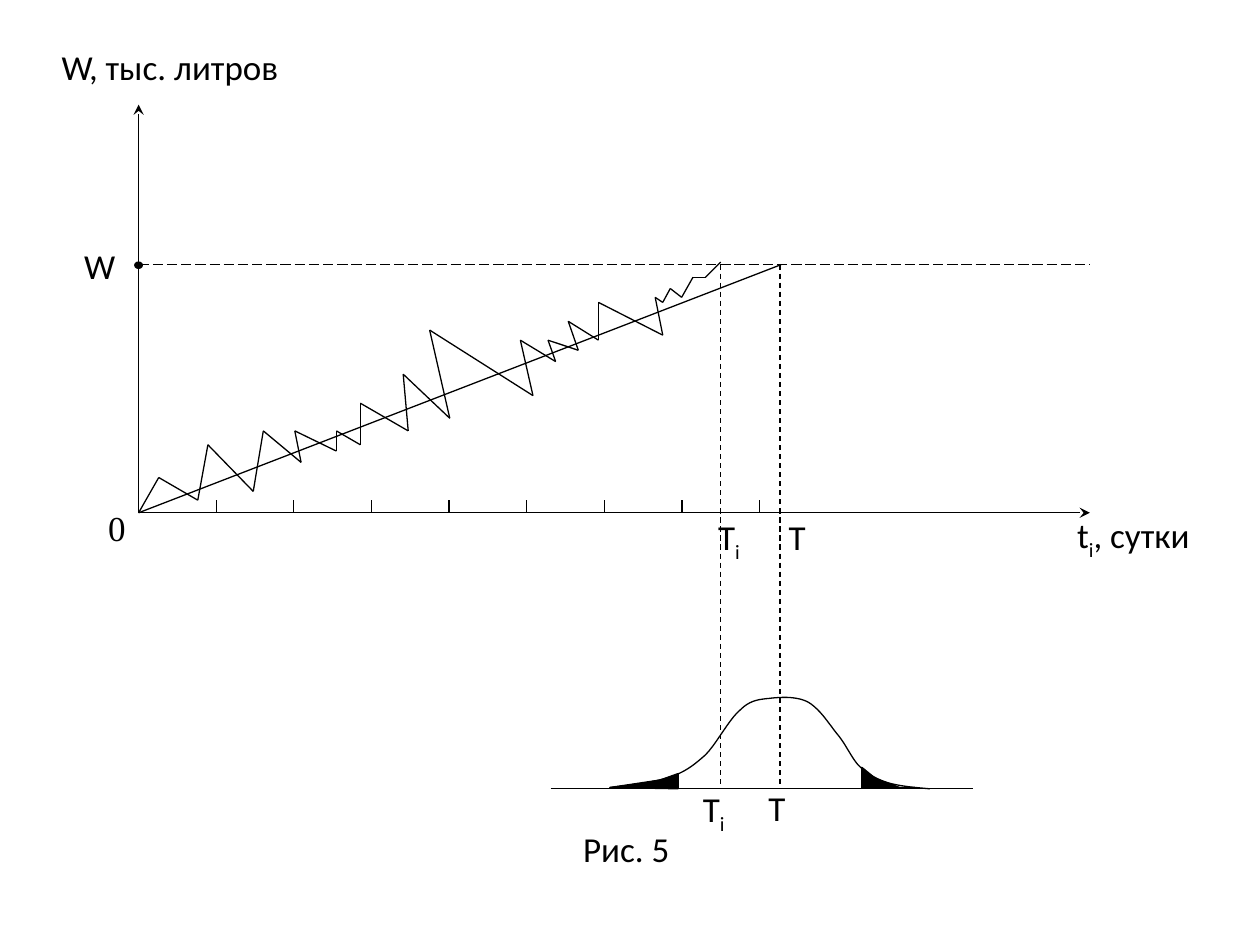
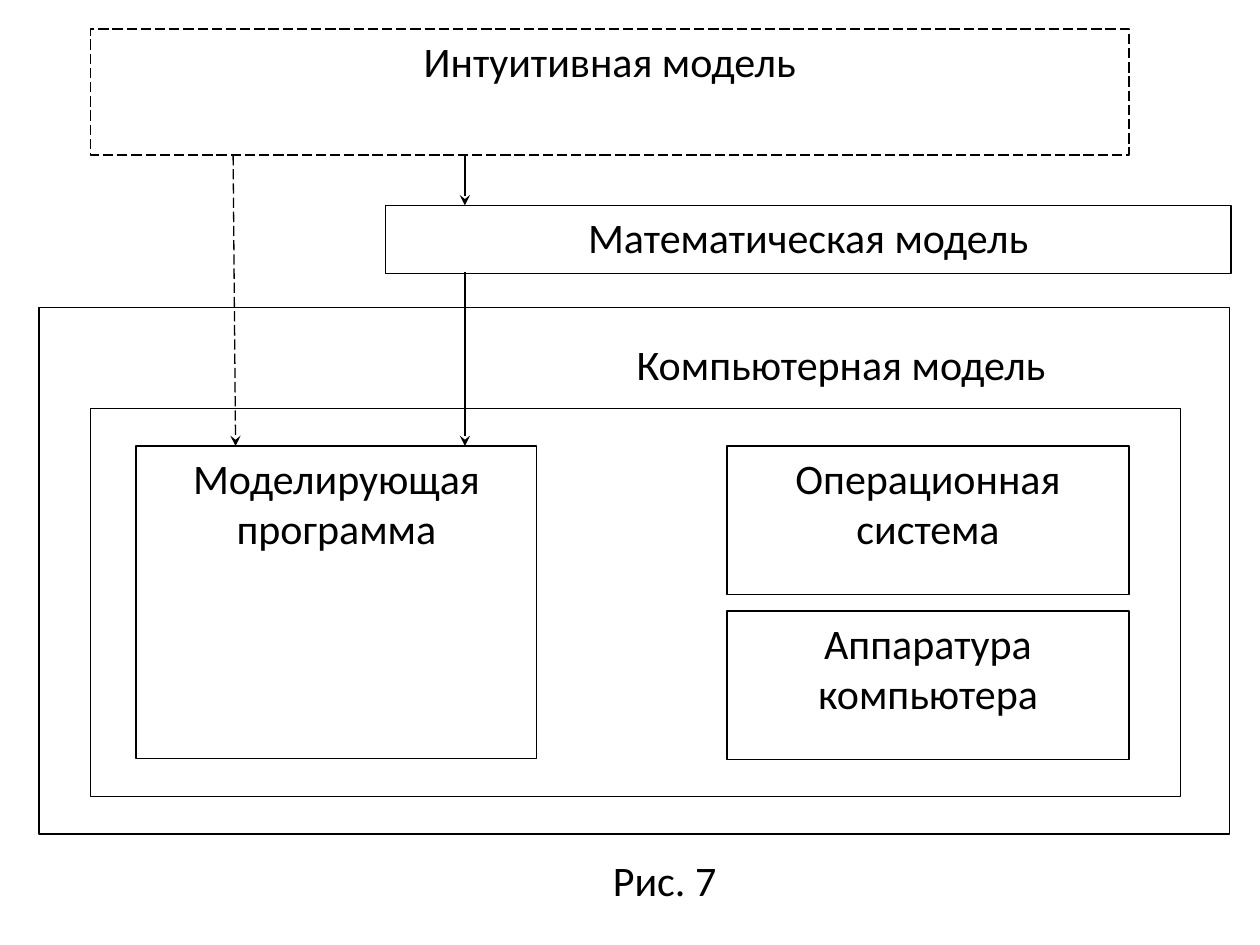
from dataclasses import dataclass
from itertools import pairwise

from lxml import etree
from pptx import Presentation
from pptx.dml.color import RGBColor
from pptx.enum import dml, shapes, text
from pptx.oxml.ns import qn
from pptx.util import Inches, Pt

Point = tuple[float, float]
LONG = dml.MSO_LINE.LONG_DASH
DASH = dml.MSO_LINE.DASH


@dataclass(frozen=True)
class Theme:
    ink: RGBColor = RGBColor(0, 0, 0)
    font: str = "Calibri"
    serif: str = "Times New Roman"
    small: int = 20
    large: int = 24
    stroke: float = 0.75
    after: int = 10


THEME = Theme()


@dataclass(frozen=True)
class Label:
    """Words in a frame; every second part between underscores is a subscript."""
    words: str
    left: float
    top: float
    width: float
    height: float = 0.59
    size: int = THEME.small
    font: str = THEME.font
    align: text.PP_ALIGN = text.PP_ALIGN.LEFT


@dataclass(frozen=True)
class Box:
    left: float
    top: float
    width: float
    height: float
    words: str = ""
    after: int = THEME.after
    dash: dml.MSO_LINE | None = None


@dataclass(frozen=True)
class Line:
    start: Point
    end: Point
    dash: dml.MSO_LINE | None = None
    arrow: bool = False


def write(shape, words: str, size: int, font: str, align, after: int) -> None:
    frame = shape.text_frame
    frame.word_wrap = True
    frame.vertical_anchor = text.MSO_ANCHOR.TOP
    para = frame.paragraphs[0]
    para.alignment = align
    para.space_after = Pt(after)
    para.font.size = Pt(size)
    para.font.name = font
    para.font.color.rgb = THEME.ink
    for place, part in enumerate(words.split("_")):
        run = para.add_run()
        run.text = part
        if place % 2:
            run._r.get_or_add_rPr().set("baseline", "-25000")


def add_label(slide, label: Label) -> None:
    area = map(Inches, (label.left, label.top, label.width, label.height))
    write(slide.shapes.add_textbox(*area), label.words, label.size,
          label.font, label.align, THEME.after)


def style(shape, filled: bool = False) -> None:
    shape.shadow.inherit = False
    if filled:
        shape.fill.solid()
        shape.fill.fore_color.rgb = THEME.ink
    else:
        shape.fill.background()
    shape.line.color.rgb = THEME.ink
    shape.line.width = Pt(THEME.stroke)


def add_box(slide, box: Box) -> None:
    area = map(Inches, (box.left, box.top, box.width, box.height))
    shape = slide.shapes.add_shape(shapes.MSO_SHAPE.RECTANGLE, *area)
    style(shape)
    if box.dash:
        shape.line.dash_style = box.dash
    if box.words:
        write(shape, box.words, THEME.large, THEME.font,
              text.PP_ALIGN.CENTER, box.after)


def add_line(slide, line: Line) -> None:
    ends = map(Inches, (*line.start, *line.end))
    link = slide.shapes.add_connector(shapes.MSO_CONNECTOR.STRAIGHT, *ends)
    link.line.color.rgb = THEME.ink
    link.line.width = Pt(THEME.stroke)
    if line.dash:
        link.line.dash_style = line.dash
    props = link._element.spPr
    if line.arrow:
        etree.SubElement(props.find(qn("a:ln")), qn("a:tailEnd"), type="stealth")
    etree.SubElement(props, qn("a:effectLst"))


def add_outline(slide, points: list[Point], closed: bool) -> None:
    """Draw an open curve, or a closed area filled with ink."""
    spots = [(Inches(x), Inches(y)) for x, y in points]
    pen = slide.shapes.build_freeform(*spots[0])
    pen.add_line_segments(spots[1:], close=closed)
    style(pen.convert_to_shape(), filled=closed)


def trace(knots: list[Point], steps: int = 10) -> list[Point]:
    """Sample a chain of cubic curves; each takes three points after its start."""
    points = [knots[0]]
    for at in range(0, len(knots) - 1, 3):
        a, b, c, d = knots[at:at + 4]
        for step in range(1, steps + 1):
            t = step / steps
            s = 1 - t
            points.append(tuple(
                s**3 * p + 3 * s * s * t * q + 3 * s * t * t * r + t**3 * e
                for p, q, r, e in zip(a, b, c, d)))
    return points


ORIGIN = (1.1, 4.07)
LEVEL = 2.1
BASE = 6.26
MEAN_X, REAL_X = 6.19, 5.72
TICKS, TICK_GAP = 8, 0.616

DEMAND = [
    ORIGIN, (1.26, 3.79), (1.57, 3.97), (1.65, 3.53), (2.01, 3.9),
    (2.09, 3.42), (2.39, 3.67), (2.34, 3.42), (2.67, 3.58), (2.67, 3.42),
    (2.86, 3.53), (2.86, 3.2), (3.24, 3.42), (3.2, 2.97), (3.57, 3.32),
    (3.41, 2.62), (4.23, 3.14), (4.13, 2.7), (4.41, 2.87), (4.35, 2.7),
    (4.59, 2.78), (4.51, 2.55), (4.75, 2.7), (4.75, 2.4), (5.26, 2.66),
    (5.2, 2.36), (5.26, 2.4), (5.32, 2.29), (5.41, 2.36), (5.5, 2.2),
    (5.6, 2.2), (REAL_X, 2.08),
]
BELL = [
    (4.84, 6.25), (5.01, 6.23), (5.18, 6.21), (5.31, 6.17),
    (5.43, 6.13), (5.5, 6.08), (5.6, 5.99),
    (5.69, 5.9), (5.79, 5.7), (5.88, 5.63),
    (5.96, 5.55), (6.04, 5.55), (6.13, 5.54),
    (6.22, 5.53), (6.33, 5.53), (6.41, 5.57),
    (6.5, 5.62), (6.57, 5.73), (6.64, 5.82),
    (6.71, 5.9), (6.75, 6), (6.81, 6.07),
    (6.88, 6.14), (6.95, 6.18), (7.04, 6.21),
    (7.14, 6.24), (7.26, 6.25), (7.38, 6.26),
]
TAILS = [
    [(4.84, 6.25), (5.24, 6.19), (5.38, 6.14), (5.38, 6.26)],
    [(7.26, 6.25), (6.84, 6.25), (6.84, 6.09), (6.95, 6.18), (7.03, 6.21),
     (7.14, 6.25)],
]
PLOT_LINES = [
    Line((4.37, BASE), (7.72, BASE)),
    Line((5.38, 6.14), (5.38, BASE)),
    Line((6.84, 6.09), (6.84, 6.25)),
    Line(ORIGIN, (8.65, ORIGIN[1]), arrow=True),
    Line(ORIGIN, (ORIGIN[0], 0.83), arrow=True),
    Line((ORIGIN[0], LEVEL), (8.65, LEVEL), LONG),
    Line(ORIGIN, (6.2, LEVEL)),
    Line((MEAN_X, LEVEL), (MEAN_X, 6.25), DASH),
    Line((REAL_X, LEVEL), (REAL_X, BASE), DASH),
]
PLOT_LABELS = [
    Label("W, тыс. литров", 0.39, 0.31, 2.28, 0.66),
    Label("W", 0.57, 1.89, 0.84, 0.66),
    Label("T", 6.16, 4.04, 0.75),
    Label("t_і_, сутки", 8.45, 4.03, 1.32),
    Label("Рис. 5", 4.53, 6.52, 1.32),
    Label("0", 0.76, 3.97, 0.5, 0.5, font=THEME.serif),
    Label("T_i", 5.48, 6.2, 0.72),
    Label("T", 6, 6.19, 0.72),
    Label("T_i", 5.6, 4.04, 0.72),
]

MODEL_BOXES = [
    Box(0.72, 0.23, 8.24, 1, "Интуитивная модель", dash=LONG),
    Box(3.06, 1.63, 6.71, 0.54, "Математическая модель"),
    Box(0.31, 2.44, 9.45, 4.18),
    Box(0.72, 3.24, 8.65, 3.08),
    Box(1.08, 3.54, 3.18, 2.48, "Моделирующая программа", after=12),
    Box(5.77, 3.54, 3.19, 1.18, "Операционная система", after=12),
    Box(5.77, 4.85, 3.19, 1.18, "Аппаратура компьютера", after=12),
]
MODEL_LINES = [
    Line((1.85, 1.23), (1.87, 3.54), LONG, arrow=True),
    Line((3.69, 1.23), (3.69, 1.63), arrow=True),
    Line((3.69, 2.16), (3.69, 3.54), arrow=True),
]
MODEL_LABELS = [
    Label(words, left, top, width, 0.54, THEME.large, align=text.PP_ALIGN.CENTER)
    for words, left, top, width in (
        ("Компьютерная модель", 3.84, 2.64, 5.67),
        ("Рис. 7", 4.61, 6.73, 1.33))
]


def draw_plot(slide) -> None:
    steps = [Line(*ends) for ends in pairwise(DEMAND)]
    ticks = [Line((x, 3.97), (x, ORIGIN[1])) for x in
             (ORIGIN[0] + TICK_GAP * n for n in range(1, TICKS + 1))]
    for line in steps + PLOT_LINES + ticks:
        add_line(slide, line)
    add_outline(slide, trace(BELL), closed=False)
    for tail in TAILS:
        add_outline(slide, tail, closed=True)
    dot = slide.shapes.add_shape(
        shapes.MSO_SHAPE.OVAL, *map(Inches, (1.07, 2.08, 0.06, 0.05)))
    style(dot, filled=True)
    for label in PLOT_LABELS:
        add_label(slide, label)


def draw_model(slide) -> None:
    for box in MODEL_BOXES:
        add_box(slide, box)
    for line in MODEL_LINES:
        add_line(slide, line)
    for label in MODEL_LABELS:
        add_label(slide, label)


def main() -> None:
    deck = Presentation()
    deck.slide_width, deck.slide_height = Inches(10), Inches(7.5)
    blank = deck.slide_layouts[6]
    for draw in (draw_plot, draw_model):
        draw(deck.slides.add_slide(blank))
    deck.save("out.pptx")


if __name__ == "__main__":
    main()
